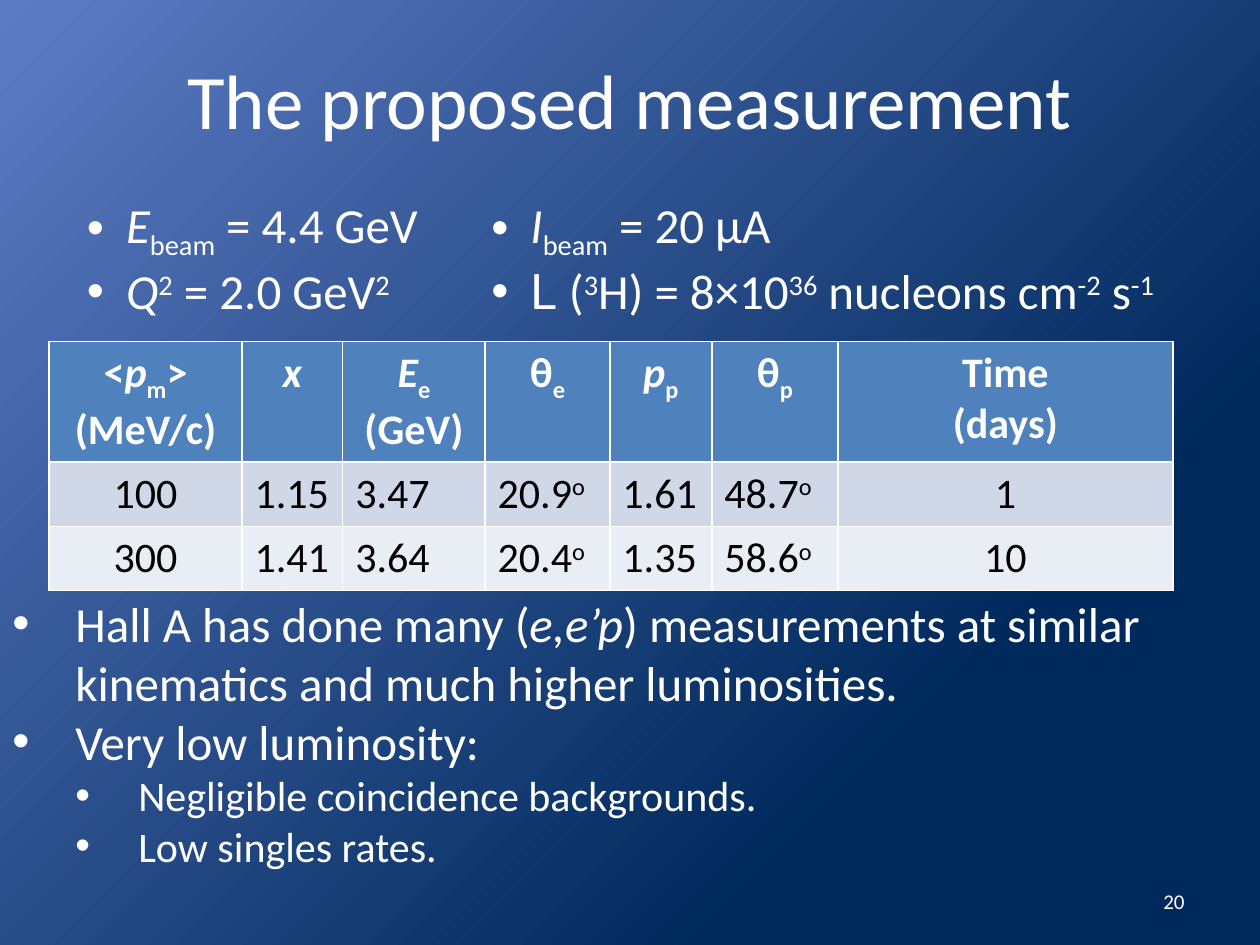
from lxml.etree import SubElement
from pptx import Presentation
from pptx.dml.color import RGBColor
from pptx.enum.text import MSO_ANCHOR, MSO_AUTO_SIZE, PP_ALIGN
from pptx.oxml.ns import qn
from pptx.util import Inches, Pt

BASELINES = {"_": "-25000", "^": "30000"}


def color(hex_text):
    return RGBColor.from_string(hex_text)


def write(paragraph, markup, size, ink="FFFFFF", bold=False, align=PP_ALIGN.LEFT, indent=None):
    paragraph.alignment = align
    paragraph.space_before = Pt(0)
    font = paragraph.font
    font.name, font.size, font.bold = "Calibri", Pt(size), bold
    font.color.rgb = color(ink)
    for piece in markup.split("|"):
        mark = piece[0] if piece[0] in "/_^@" else ""
        run = paragraph.add_run()
        run.text = piece[len(mark):]
        if mark == "/":
            run.font.italic = True
        elif mark == "@":
            run.font.name = "Roboto"
        elif mark:
            run.font._element.set("baseline", BASELINES[mark])
    if indent:
        margin, hanging = indent
        properties = paragraph._p.get_or_add_pPr()
        properties.set("marL", str(Inches(margin)))
        properties.set("indent", str(-Inches(hanging)))
        bullet_font = properties.makeelement(qn("a:buFont"), {"typeface": "Arial"})
        bullet = properties.makeelement(qn("a:buChar"), {"char": "•"})
        default_font = properties.find(qn("a:defRPr"))
        default_font.addprevious(bullet_font)
        default_font.addprevious(bullet)


deck = Presentation()
deck.slide_width, deck.slide_height = Inches(10), Inches(7.5)
slide = deck.slides.add_slide(deck.slide_layouts[3])

backdrop = slide.background.fill
backdrop.gradient()
for stop, (position, shade) in zip(backdrop.gradient_stops, [(0, "5E7CC5"), (0.75, "00295C")]):
    stop.position = position
    stop.color.rgb = color(shade)
linear = next(slide.background._cSld.iter(qn("a:lin")))
gradient = linear.getparent()
gradient.remove(linear)
circle = SubElement(gradient, qn("a:path"), {"path": "circle"})
SubElement(circle, qn("a:fillToRect"), {"r": "100000", "b": "100000"})

title, beam, luminosity = slide.placeholders
remarks = slide.shapes.add_textbox(0, 0, 0, 0)
page_number = slide.shapes.add_textbox(0, 0, 0, 0)
for holder, box, anchor in [
    (title, (0.5, 0.16, 9, 1.25), MSO_ANCHOR.MIDDLE),
    (beam, (0.59, 1.49, 2.94, 1.04), MSO_ANCHOR.TOP),
    (luminosity, (3.8, 1.49, 5.7, 1.04), MSO_ANCHOR.TOP),
    (remarks, (0, 4.66, 10, 2.32), MSO_ANCHOR.TOP),
    (page_number, (7.17, 6.95, 2.33, 0.4), MSO_ANCHOR.MIDDLE),
]:
    holder.left, holder.top, holder.width, holder.height = map(Inches, box)
    holder.text_frame.word_wrap = True
    holder.text_frame.auto_size = MSO_AUTO_SIZE.NONE
    holder.text_frame.vertical_anchor = anchor

write(title.text_frame.paragraphs[0], "The proposed measurement", 44, align=PP_ALIGN.CENTER)
write(page_number.text_frame.paragraphs[0], "20", 12, align=PP_ALIGN.RIGHT)

top_indent, remark_indent, detail_indent = (0.31, 0.31), (0.5, 0.5), (1, 0.5)
for holder, items in [
    (beam, [
        ("/E|_beam| = 4.4 GeV", 28, 0, top_indent),
        ("/Q|^2| = 2.0 GeV|^2", 28, 0, top_indent),
    ]),
    (luminosity, [
        ("/I|_beam| = 20 μA", 28, 0, top_indent),
        ("@L |(|^3|H) = 8×10|^36| nucleons cm|^-2| s|^-1", 28, 0, top_indent),
    ]),
    (remarks, [
        ("Hall A has done many (|/e,e’p|) measurements at similar kinematics "
         "and much higher luminosities.", 28, 0, remark_indent),
        ("Very low luminosity:", 28, 0, remark_indent),
        ("Negligible coincidence backgrounds.", 24, 1, detail_indent),
        ("Low singles rates.", 24, 1, detail_indent),
    ]),
]:
    frame = holder.text_frame
    for index, (markup, size, level, indent) in enumerate(items):
        paragraph = frame.add_paragraph() if index else frame.paragraphs[0]
        paragraph.level = level
        write(paragraph, markup, size, indent=indent)

kinematics = [
    ["<|/p|_m|>\n(MeV/c)", "/x", "/E|_e\n(GeV)", "θ|_e", "/p|_p", "θ|_p", "Time\n(days)"],
    ["100", "1.15", "3.47", "20.9|^o", "1.61", "48.7|^o", "1"],
    ["300", "1.41", "3.64", "20.4|^o", "1.35", "58.6|^o", "10"],
]
column_widths = [1.53, 0.8, 1.13, 0.99, 0.81, 1, 2.66]
row_heights = [0.95, 0.51, 0.51]
row_fills = ["4F81BD", "D0D8E8", "E9EDF4"]
table = slide.shapes.add_table(
    len(row_heights), len(column_widths), Inches(0.39), Inches(2.71),
    Inches(sum(column_widths)), Inches(sum(row_heights))).table
for column, width in zip(table.columns, column_widths):
    column.width = Inches(width)
for r, values in enumerate(kinematics):
    table.rows[r].height = Inches(row_heights[r])
    header = r == 0
    for c, value in enumerate(values):
        cell = table.cell(r, c)
        cell.fill.solid()
        cell.fill.fore_color.rgb = color(row_fills[r])
        centred = header or c in (0, len(values) - 1)
        for index, line in enumerate(value.split("\n")):
            frame = cell.text_frame
            paragraph = frame.add_paragraph() if index else frame.paragraphs[0]
            write(paragraph, line, 24, "FFFFFF" if header else "000000", header,
                  PP_ALIGN.CENTER if centred else PP_ALIGN.LEFT)

deck.save("out.pptx")
